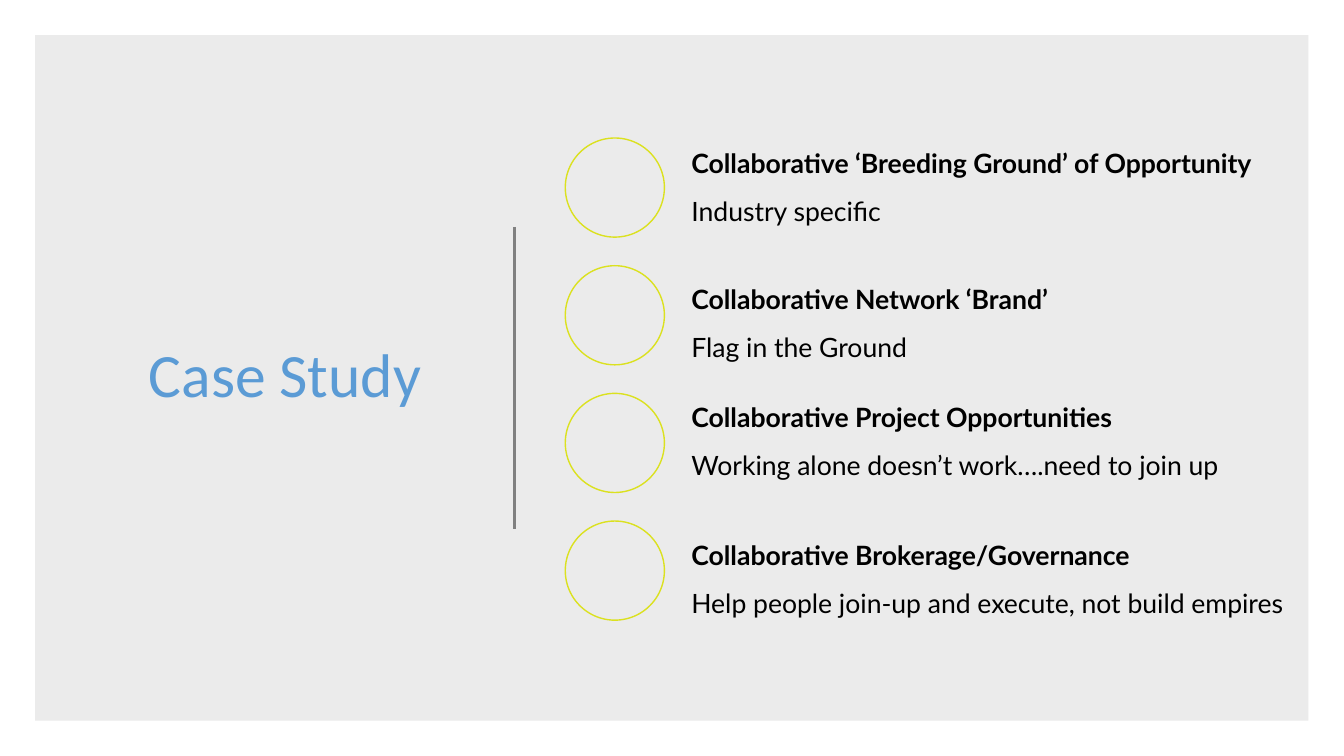
from pptx import Presentation
from pptx.dml.color import RGBColor
from pptx.enum.shapes import MSO_CONNECTOR as Conn, MSO_SHAPE as Kind
from pptx.enum.text import MSO_ANCHOR as Anchor, PP_ALIGN as Align
from pptx.oxml.ns import qn
from pptx.util import Pt
from lxml import etree

GREY, LIME, BLUE, RULE, BLACK = "EBEBEB", "DBE11F", "5B9BD5", "808080", "000000"

# Heading, detail, then top and height of the text relative to the list
ITEMS = [
    ("Collaborative ‘Breeding Ground’ of Opportunity", "Industry specific", -6.4, 70.6),
    ("Collaborative Network ‘Brand’ ", "Flag in the Ground", 90.8, 70.6),
    ("Collaborative Project Opportunities",
     "Working alone doesn’t work….need to join up", 171.4, 77.8),
    ("Collaborative Brokerage/Governance",
     "Help people join-up and execute, not build empires", 263.6, 90.7),
]


def color(code):
    return RGBColor.from_string(code)


def add_form(slide, kind, box, fill, line=None):
    form = slide.shapes.add_shape(kind, *map(Pt, box))
    form.shadow.inherit = False
    form.fill.solid()
    form.fill.fore_color.rgb = color(fill)
    if line:
        form.line.color.rgb = color(line)
        form.line.width = Pt(1)
    else:
        form.line.fill.background()


def add_text(slide, box, align, lead):
    frame = slide.shapes.add_textbox(*map(Pt, box)).text_frame
    frame.word_wrap = True
    frame.vertical_anchor = Anchor.MIDDLE
    para = frame.paragraphs[0]
    para.alignment = align
    para.line_spacing = lead
    return para


def add_run(para, text, font, size, code, bold=False):
    run = para.add_run()
    run.text = text
    run.font.name = font
    run.font.size = Pt(size)
    run.font.bold = bold
    run.font.color.rgb = color(code)


def add_rule(slide, x, top, end):
    rule = slide.shapes.add_connector(Conn.STRAIGHT, Pt(x), Pt(top), Pt(x), Pt(end))
    rule.line.color.rgb = color(RULE)
    rule.line.width = Pt(2.25)
    etree.SubElement(rule._element.spPr, qn("a:effectLst"))


def add_title(slide, box):
    para = add_text(slide, box, Align.CENTER, 0.9)
    add_run(para, "Case Study", "Calibri", 44, BLUE)


def add_list(slide, left, top, width):
    size, pitch, indent = 70.8, 91.2, 83
    for i, (head, detail, shift, height) in enumerate(ITEMS):
        add_form(slide, Kind.OVAL, (left, top + i * pitch, size, size), GREY, LIME)
        box = (left + indent, top + shift, width - indent, height)
        para = add_text(slide, box, Align.LEFT, 1.5)
        para.space_before = Pt(10)
        add_run(para, head, "Lato", 19, BLACK, True)
        para.add_line_break()
        # The break takes the size of the text around it
        mark = para._p.find(qn("a:br"))
        etree.SubElement(mark, qn("a:rPr")).set("sz", "1900")
        add_run(para, detail, "Lato", 19, BLACK)


def main():
    deck = Presentation()
    deck.slide_width, deck.slide_height = Pt(960), Pt(540)
    slide = deck.slides.add_slide(deck.slide_layouts[6])
    # Panel and divider
    add_form(slide, Kind.RECTANGLE, (25.2, 25.2, 909.4, 489.6), GREY)
    add_rule(slide, 367.2, 162, 378)
    # Title on the left, list on the right
    add_title(slide, (66.2, 75.6, 275, 388))
    add_list(slide, 403.8, 98.6, 531)
    deck.save("out.pptx")


if __name__ == "__main__":
    main()
